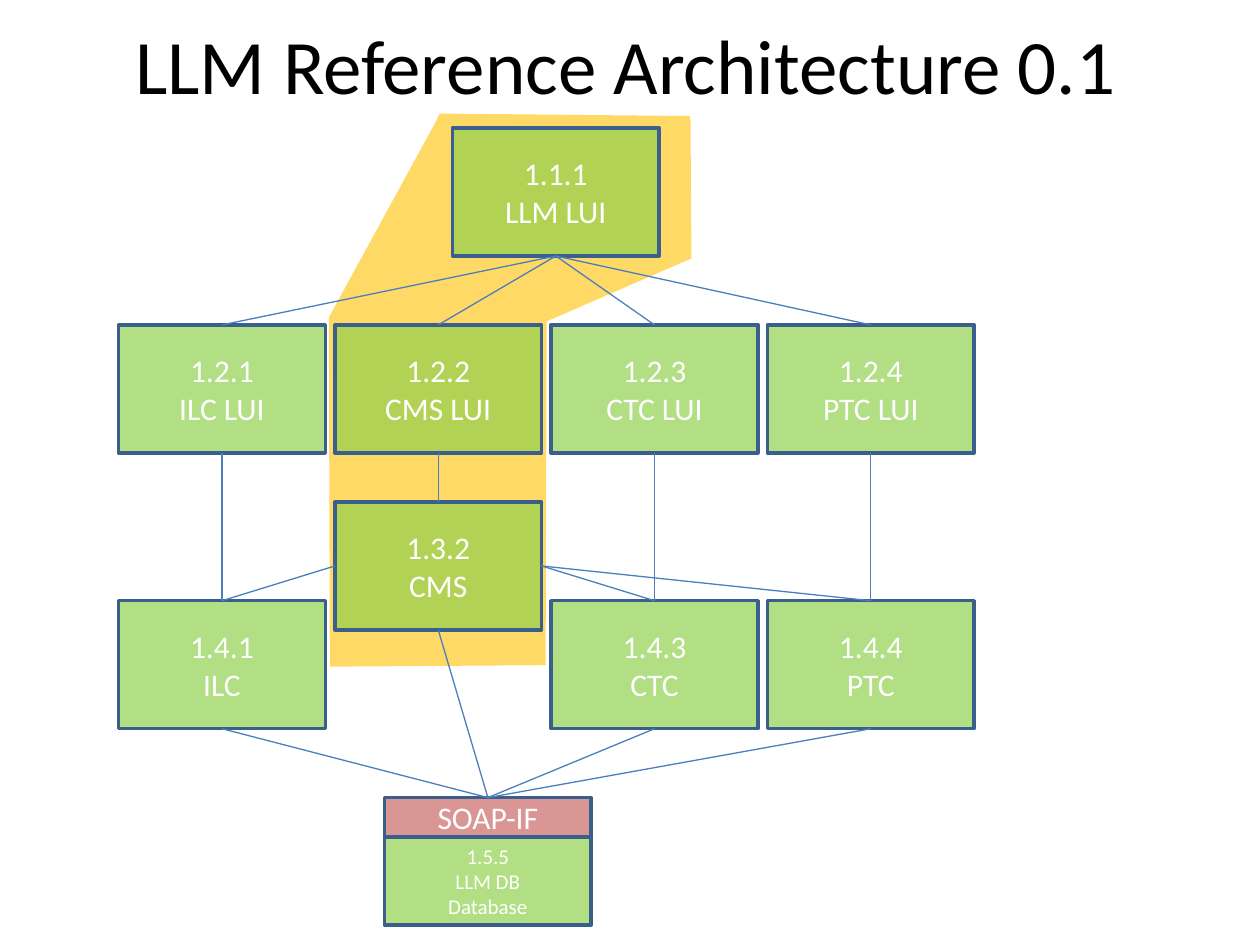
from typing import NamedTuple

from lxml.etree import SubElement
from pptx import Presentation
from pptx.dml.color import RGBColor
from pptx.enum.shapes import MSO_CONNECTOR, MSO_SHAPE
from pptx.enum.text import MSO_ANCHOR, PP_ALIGN
from pptx.oxml.ns import qn
from pptx.util import Cm, Pt

FONT = "Calibri"
HUES = {
    "black": "000000", "white": "FFFFFF", "green": "92D050", "rose": "D99694",
    "amber": "FFC000", "edge": "3A5F8C", "link": "4B7EBC",
}
WIDE, HIGH = 4.17, 2.58
COLS = [2.39 + 4.36 * i for i in range(4)]
LUI_ROW, CMS_ROW, CORE_ROW = 6.55, 10.12, 12.11
DB_LEFT = 7.75
TOP, LEFT, BOTTOM, RIGHT = range(4)


class Box(NamedTuple):
    key: str
    text: str
    left: float
    top: float
    high: float = HIGH
    size: int = 18
    hue: str = "green"
    alpha: int = 70


class Link(NamedTuple):
    start: str
    side: int
    end: str
    dock: int = TOP


BOXES = [
    Box("ilc_lui", "1.2.1\nILC LUI", COLS[0], LUI_ROW),
    Box("llm_lui", "1.1.1\nLLM LUI", 9.12, 2.58),
    Box("cms_lui", "1.2.2\nCMS LUI", COLS[1], LUI_ROW),
    Box("ctc_lui", "1.2.3\nCTC LUI", COLS[2], LUI_ROW),
    Box("ptc_lui", "1.2.4\nPTC LUI", COLS[3], LUI_ROW),
    Box("ilc", "1.4.1\nILC", COLS[0], CORE_ROW),
    Box("cms", "1.3.2\nCMS", COLS[1], CMS_ROW),
    Box("ctc", "1.4.3\nCTC", COLS[2], CORE_ROW),
    Box("ptc", "1.4.4\nPTC", COLS[3], CORE_ROW),
]
STORE = [
    Box("db", "1.5.5\nLLM DB\nDatabase", DB_LEFT, 16.87, 1.78, 12),
    Box("soap", "SOAP-IF", DB_LEFT, 16.08, 0.79, 18, "rose", 100),
]
UNITS = ["ilc", "cms", "ctc", "ptc"]
LINKS = [
    *(Link("llm_lui", BOTTOM, f"{unit}_lui") for unit in UNITS),
    *(Link(f"{unit}_lui", BOTTOM, unit) for unit in UNITS),
    Link("cms", LEFT, "ilc"),
    Link("cms", RIGHT, "ctc"),
    Link("cms", RIGHT, "ptc"),
    *(Link(unit, BOTTOM, "soap") for unit in UNITS),
]
AREA = [
    (8.81, 2.41), (6.63, 6.4), (6.65, 13.44), (11, 13.41),
    (11.02, 6.48), (13.94, 5.21), (13.92, 2.34), (8.86, 2.29),
]


def color(name: str) -> RGBColor:
    return RGBColor.from_string(HUES[name])


def paint(shape, hue: str, alpha: int = 100) -> None:
    """Fill a shape; alpha is the opacity in percent."""
    shape.shadow.inherit = False
    shape.fill.solid()
    shape.fill.fore_color.rgb = color(hue)
    if alpha < 100:
        tint = shape.element.spPr.find(f"{qn('a:solidFill')}/{qn('a:srgbClr')}")
        SubElement(tint, qn("a:alpha")).set("val", str(alpha * 1000))


def write(shape, text: str, size: int, hue: str) -> None:
    frame = shape.text_frame
    frame.text = text
    frame.word_wrap = True
    frame.vertical_anchor = MSO_ANCHOR.MIDDLE
    for para in frame.paragraphs:
        para.alignment = PP_ALIGN.CENTER
        for run in para.runs:
            run.font.name = FONT
            run.font.size = Pt(size)
            run.font.color.rgb = color(hue)


def add_box(shapes, box: Box):
    shape = shapes.add_shape(MSO_SHAPE.RECTANGLE, Cm(box.left), Cm(box.top),
                             Cm(WIDE), Cm(box.high))
    paint(shape, box.hue, box.alpha)
    shape.line.color.rgb = color("edge")
    shape.line.width = Pt(2)
    write(shape, box.text, box.size, "white")
    return shape


def add_link(shapes, link: Link, nodes: dict) -> None:
    line = shapes.add_connector(MSO_CONNECTOR.STRAIGHT, 0, 0, 0, 0)
    line.begin_connect(nodes[link.start], link.side)
    line.end_connect(nodes[link.end], link.dock)
    line.line.color.rgb = color("link")
    line.line.width = Pt(0.75)
    SubElement(line.element.spPr, qn("a:effectLst"))


def add_area(shapes):
    first, *rest = [(Cm(x), Cm(y)) for x, y in AREA]
    pen = shapes.build_freeform(*first)
    pen.add_line_segments(rest)
    area = pen.convert_to_shape()
    paint(area, "amber", 60)
    area.line.fill.background()
    return area


def main() -> None:
    deck = Presentation()
    deck.slide_width, deck.slide_height = Cm(25.4), Cm(19.05)
    shapes = deck.slides.add_slide(deck.slide_layouts[5]).shapes

    title = shapes.title
    title.left, title.top = Cm(1.19), Cm(0)
    title.width, title.height = Cm(22.86), Cm(2.58)
    write(title, "LLM Reference Architecture 0.1", 44, "black")
    title.element.addprevious(add_area(shapes).element)

    nodes = {box.key: add_box(shapes, box) for box in BOXES}
    group = shapes.add_group_shape()
    nodes |= {box.key: add_box(group.shapes, box) for box in STORE}
    for link in LINKS:
        add_link(shapes, link, nodes)
    deck.save("out.pptx")


if __name__ == "__main__":
    main()
